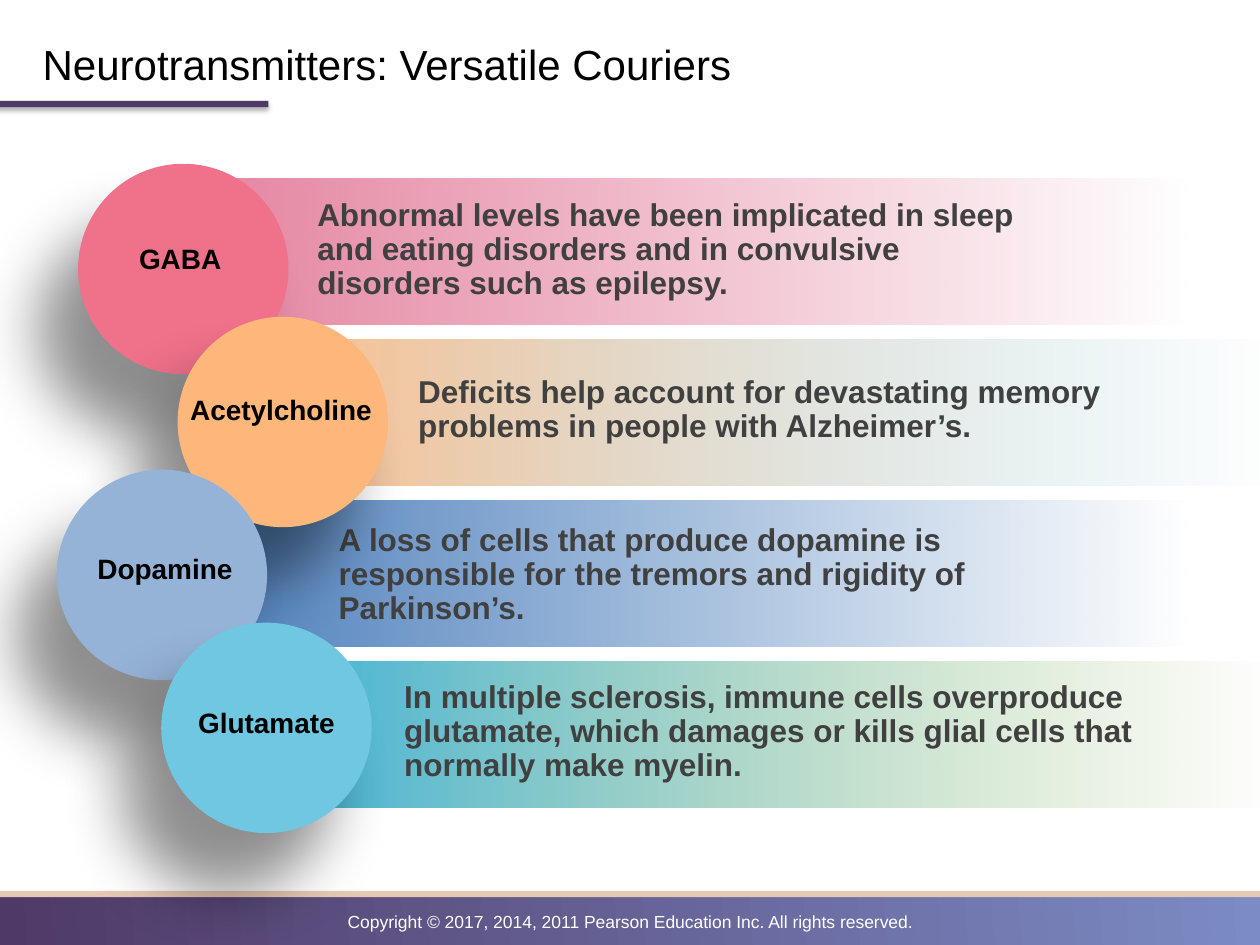
import pptx
import pptx.dml.color
import pptx.enum.shapes
import pptx.enum.text
import pptx.oxml
import pptx.oxml.ns
import pptx.util
from pptx.util import Inches

# Content
TITLE = "Neurotransmitters: Versatile Couriers"
COPYRIGHT = "Copyright © 2017, 2014, 2011 Pearson Education Inc. All rights reserved."

# Circle: name, colour, left, label (left, top, width)
# Bar: left, start and end colours, text, text (left, top, width, height)
TRANSMITTERS = [
    dict(name="GABA", color="EF718A", circle_left=0.62, label=(0.42, 1.9, 2.02),
         bar_left=1.58, fade=("E585A1", "E585A1"), effect_at=(2.42, 1.53, 5.77, 0.92),
         effect="Abnormal levels have been implicated in sleep and eating disorders "
                "and in convulsive disorders such as epilepsy."),
    dict(name="Acetylcholine", color="FDB77B", circle_left=1.41, label=(1.29, 3.1, 1.88),
         bar_left=2.27, fade=("FAC090", "93CDDD"), effect_at=(3.22, 2.94, 5.77, 0.65),
         effect="Deficits help account for devastating memory problems in people "
                "with Alzheimer’s."),
    dict(name="Dopamine", color="95B3D7", circle_left=0.45, label=(0.36, 4.36, 1.9),
         bar_left=1.58, fade=("4F81BD", "4F81BD"), effect_at=(2.59, 4.11, 5.77, 0.92),
         effect="A loss of cells that produce dopamine is responsible for the tremors "
                "and rigidity of Parkinson’s."),
    dict(name="Glutamate", color="6FC7E2", circle_left=1.28, label=(1.27, 5.58, 1.69),
         bar_left=2.27, fade=("42B3D9", "9BBB59"), effect_at=(3.11, 5.36, 6.02, 0.92),
         effect="In multiple sclerosis, immune cells overproduce glutamate, which "
                "damages or kills glial cells that normally make myelin."),
]

THEME = dict(
    font="Arial",
    purple="4F3967", periwinkle="7C8BC4", sand="E7C8B3",
    title=dict(size=24, color="000000", bold=False),
    effect=dict(size=18, color="404040", bold=True),
    label=dict(size=16, color="000000", bold=True),
    footer=dict(size=10, color="FFFFFF", bold=False),
    # opacity in percent, blur and distance in points, direction in degrees
    rule_shadow=dict(opacity=35, blur=3.1, distance=1.8, direction=90),
    circle_shadow=dict(opacity=43, blur=35.5, distance=41, direction=124),
)

# Layout rules
BAR_TOP, BAR_STEP, BAR_WIDTH, BAR_HEIGHT = 1.42, 1.277, 7.87, 1.16
CIRCLE_TOP, CIRCLE_STEP, CIRCLE_SIZE = 1.3, 1.214, 1.67
LABEL_HEIGHT = 0.35

SHAPE = pptx.enum.shapes.MSO_SHAPE
ALIGN = pptx.enum.text.PP_ALIGN
ANCHOR = pptx.enum.text.MSO_ANCHOR


def rgb(value):
    return pptx.dml.color.RGBColor.from_string(value)


def add_shape(page, kind, place, color=None, shadow=None):
    shape = page.shapes.add_shape(kind, *map(Inches, place))
    shape.line.fill.background()
    shape.shadow.inherit = False
    if color:
        shape.fill.solid()
        shape.fill.fore_color.rgb = rgb(color)
    if shadow:
        effects = shape.element.spPr.find(pptx.oxml.ns.qn("a:effectLst"))
        effects.append(pptx.oxml.parse_xml(
            f'<a:outerShdw {pptx.oxml.ns.nsdecls("a")}'
            f' blurRad="{pptx.util.Pt(shadow["blur"])}"'
            f' dist="{pptx.util.Pt(shadow["distance"])}"'
            f' dir="{shadow["direction"] * 60000}" algn="ctr" rotWithShape="0">'
            f'<a:srgbClr val="000000"><a:alpha val="{shadow["opacity"] * 1000}"/>'
            '</a:srgbClr></a:outerShdw>'))
    return shape


def fill_gradient(shape, colors, angle=0, fade_out=False):
    shape.fill.gradient()
    shape.fill.gradient_angle = angle
    stops = shape.fill.gradient_stops
    for stop, color in zip(stops, colors):
        stop.color.rgb = rgb(color)
    if fade_out:
        gradient = shape.element.spPr.find(pptx.oxml.ns.qn("a:gradFill"))
        last_color = gradient.findall(".//" + pptx.oxml.ns.qn("a:srgbClr"))[-1]
        last_color.append(pptx.oxml.parse_xml(
            f'<a:alpha {pptx.oxml.ns.nsdecls("a")} val="0"/>'))


def add_text(page, text, place, style, align=ALIGN.LEFT, spacing=1.0, anchor=ANCHOR.TOP):
    box = page.shapes.add_textbox(*map(Inches, place))
    frame = box.text_frame
    frame.word_wrap = True
    frame.vertical_anchor = anchor
    para = frame.paragraphs[0]
    para.alignment = align
    para.line_spacing = spacing
    span = para.add_run()
    span.text = text
    format_values = dict(name=THEME["font"], size=pptx.util.Pt(style["size"]),
                         bold=style["bold"])
    for name, value in format_values.items():
        setattr(span.font, name, value)
    span.font.color.rgb = rgb(style["color"])


def main():
    deck = pptx.Presentation()
    deck.slide_width, deck.slide_height = Inches(10), Inches(7.5)
    page = deck.slides.add_slide(deck.slide_layouts[6])

    # Footer band
    band = add_shape(page, SHAPE.RECTANGLE, (0, 7.08, 10, 0.45))
    fill_gradient(band, (THEME["purple"], THEME["periwinkle"]), angle=4)
    add_shape(page, SHAPE.RECTANGLE, (0, 7.07, 10.05, 0.05), THEME["sand"])
    add_text(page, COPYRIGHT, (0, 7.18, 10, 0.27), THEME["footer"], ALIGN.CENTER)

    # Title and rule
    add_shape(page, SHAPE.RECTANGLE, (-0.19, 0.8, 2.32, 0.05), THEME["purple"],
              THEME["rule_shadow"])
    add_text(page, TITLE, (0.24, 0.21, 8.5, 0.59), THEME["title"], anchor=ANCHOR.MIDDLE)

    # Fading bars with effects
    for row, item in enumerate(TRANSMITTERS):
        bar = add_shape(page, SHAPE.RECTANGLE, (
            item["bar_left"], BAR_TOP + row * BAR_STEP, BAR_WIDTH, BAR_HEIGHT))
        fill_gradient(bar, item["fade"], fade_out=True)
        add_text(page, item["effect"], item["effect_at"], THEME["effect"], spacing=0.9)

    # Overlapping circles with names
    for row, item in enumerate(TRANSMITTERS):
        add_shape(page, SHAPE.OVAL, (
            item["circle_left"], CIRCLE_TOP + row * CIRCLE_STEP, CIRCLE_SIZE, CIRCLE_SIZE),
            item["color"], THEME["circle_shadow"])
        add_text(page, item["name"], (*item["label"], LABEL_HEIGHT), THEME["label"],
                 ALIGN.CENTER, 0.9)

    deck.save("out.pptx")


if __name__ == "__main__":
    main()
